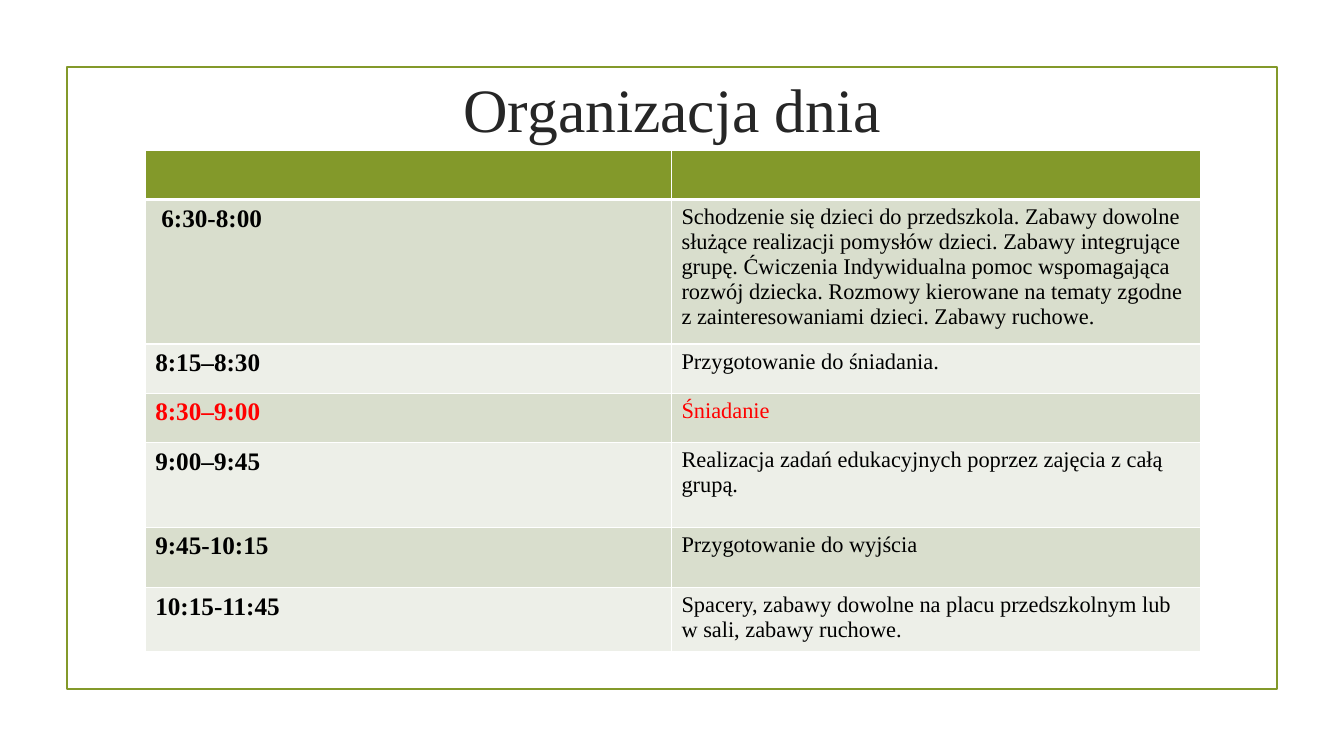
from dataclasses import dataclass

from lxml import etree
from pptx import Presentation
from pptx import util as u
from pptx.dml.color import RGBColor
from pptx.enum import shapes, text
from pptx.oxml.ns import qn


@dataclass(frozen=True)
class Theme:
    font: str = "Times New Roman"
    green: str = "83992A"
    bands: tuple = ("D9DECD", "EDEFE8")
    white: str = "FFFFFF"
    title: str = "262626"
    body: str = "000000"
    meal: str = "FF0000"
    title_size: int = 44
    hour_size: int = 18
    activity_size: int = 16


THEME = Theme()
WIDTH, HEIGHT = 13.33, 7.5
COLUMNS = (5.22, 5.25)
HEADER_HEIGHT = 0.49
# hours, activity, row height, colour
SCHEDULE = (
    ("6:30-8:00",
     "Schodzenie się dzieci do przedszkola. Zabawy dowolne służące realizacji "
     "pomysłów dzieci. Zabawy integrujące grupę. Ćwiczenia Indywidualna pomoc "
     "wspomagająca rozwój dziecka. Rozmowy kierowane na tematy zgodne "
     "z zainteresowaniami dzieci. Zabawy ruchowe.", 1.33, THEME.body),
    ("8:15–8:30", "Przygotowanie do śniadania.", 0.49, THEME.body),
    ("8:30–9:00", "Śniadanie", 0.49, THEME.meal),
    ("9:00–9:45",
     "Realizacja zadań edukacyjnych poprzez zajęcia z całą grupą.",
     0.84, THEME.body),
    ("9:45-10:15", "Przygotowanie do wyjścia", 0.6, THEME.body),
    ("10:15-11:45",
     "Spacery, zabawy dowolne na placu przedszkolnym lub w sali, "
     "zabawy ruchowe.", 0.6, THEME.body),
)


def inches(box):
    return [u.Inches(v) for v in box]


def write(tf, words, color, **font):
    p = tf.paragraphs[0]
    r = p.add_run()
    r.text = words
    for name, value in {"name": THEME.font, **font}.items():
        setattr(r.font, name, value)
    r.font.color.rgb = RGBColor.from_string(color)
    return p


def add_frame(slide, box):
    sp = slide.shapes.add_shape(shapes.MSO_SHAPE.RECTANGLE, *inches(box))
    sp.shadow.inherit = False
    sp.fill.background()
    sp.line.color.rgb = RGBColor.from_string(THEME.green)
    sp.line.width = u.Pt(1.25)


def add_title(slide, box, words):
    tf = slide.shapes.add_textbox(*inches(box)).text_frame
    tf.word_wrap = True
    tf.vertical_anchor = text.MSO_ANCHOR.MIDDLE
    p = write(tf, words, THEME.title, size=u.Pt(THEME.title_size))
    p.alignment = text.PP_ALIGN.CENTER


def style_cell(cell, fill, bottom=1, top=1):
    """Give the cell white borders, in points, and a plain fill."""
    tc_pr = cell._tc.get_or_add_tcPr()
    for side, width in {"L": 1, "R": 1, "T": top, "B": bottom}.items():
        ln = etree.SubElement(tc_pr, qn(f"a:ln{side}"), w=str(u.Pt(width)))
        solid = etree.SubElement(ln, qn("a:solidFill"))
        etree.SubElement(solid, qn("a:srgbClr"), val=THEME.white)
    cell.fill.solid()
    cell.fill.fore_color.rgb = RGBColor.from_string(fill)


def add_schedule(slide, left, top):
    heights = [HEADER_HEIGHT] + [row[2] for row in SCHEDULE]
    box = (left, top, sum(COLUMNS), sum(heights))
    table = slide.shapes.add_table(len(heights), len(COLUMNS),
                                   *inches(box)).table
    table.first_row = table.horz_banding = False
    for column, width in zip(table.columns, COLUMNS):
        column.width = u.Inches(width)
    for row, height in zip(table.rows, heights):
        row.height = u.Inches(height)

    for cell in table.rows[0].cells:
        style_cell(cell, THEME.green, bottom=3)
    for i, (hours, activity, _, color) in enumerate(SCHEDULE):
        hour_cell, activity_cell = table.rows[i + 1].cells
        for cell in (hour_cell, activity_cell):
            style_cell(cell, THEME.bands[i % 2], top=1 if i else 3)
        write(hour_cell.text_frame, hours, color,
              size=u.Pt(THEME.hour_size), bold=True)
        write(activity_cell.text_frame, activity, color,
              size=u.Pt(THEME.activity_size), bold=False)
    table.cell(1, 0).margin_left = u.Inches(0.16)


def main():
    prs = Presentation()
    prs.slide_width, prs.slide_height = inches((WIDTH, HEIGHT))
    slide = prs.slides.add_slide(prs.slide_layouts[6])
    margin = 0.05 * WIDTH
    add_frame(slide, (margin, margin, 0.9 * WIDTH, 6.17))
    add_title(slide, (1.42, 0.36, 10.5, 1.43), "Organizacja dnia")
    add_schedule(slide, 1.44, 1.49)
    prs.save("out.pptx")


if __name__ == "__main__":
    main()
